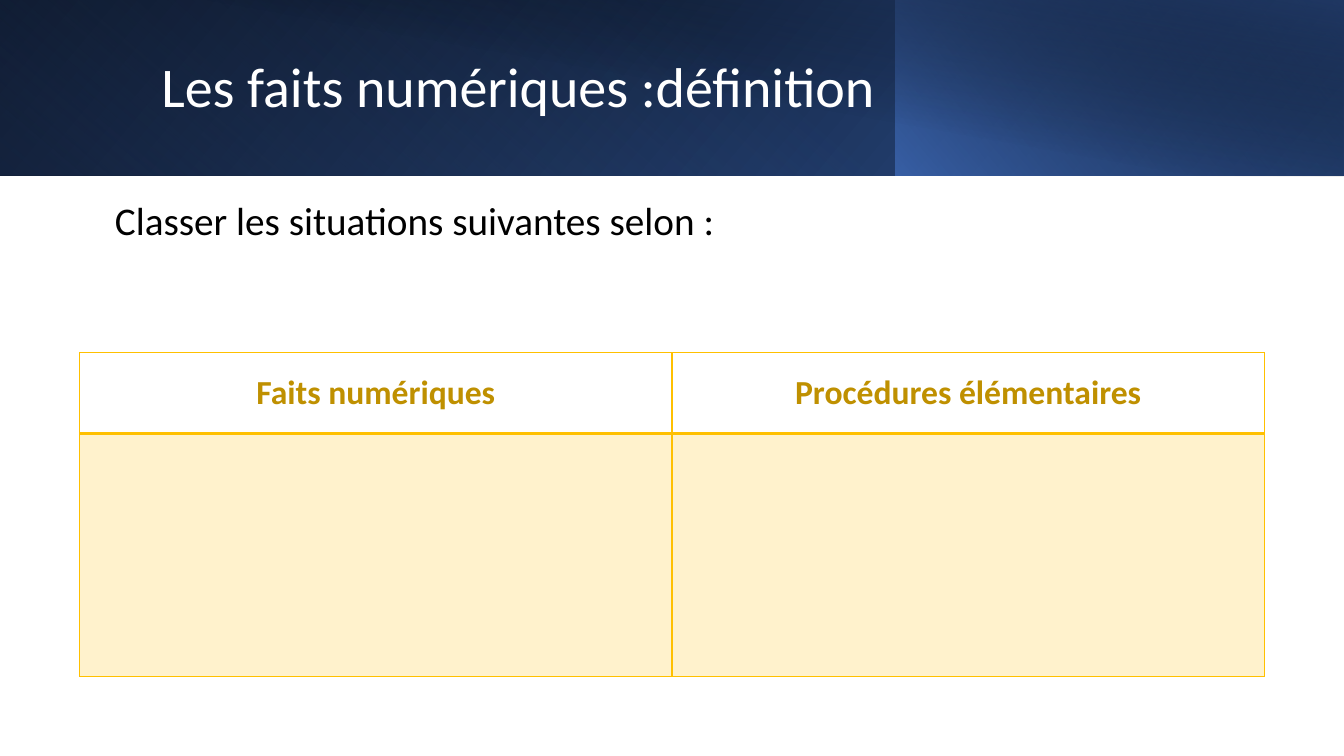
from lxml.etree import SubElement
from pptx import Presentation
from pptx.dml.color import RGBColor
from pptx.enum.shapes import MSO_SHAPE
from pptx.enum.text import MSO_ANCHOR, MSO_AUTO_SIZE, PP_ALIGN
from pptx.oxml import parse_xml
from pptx.oxml.ns import nsdecls, qn
from pptx.util import Inches, Pt

WIDTH, HEIGHT = 13.33, 7.5
BAND_HEIGHT = 1.74
SPLIT = WIDTH * 2 / 3
GOLD = "FFC000"


def color(hex_string):
    return RGBColor.from_string(hex_string)


def gradient_xml(stops, angle):
    stop_xml = "".join(
        f'<a:gs pos="{position * 1000}"><a:srgbClr val="{tone}">'
        f'<a:alpha val="{opacity * 1000}"/></a:srgbClr></a:gs>'
        for position, tone, opacity in stops
    )
    return parse_xml(
        f'<a:gradFill {nsdecls("a")} rotWithShape="1"><a:gsLst>{stop_xml}</a:gsLst>'
        f'<a:lin ang="{angle * 60000}" scaled="0"/></a:gradFill>'
    )


presentation = Presentation()
presentation.slide_width = Inches(WIDTH)
presentation.slide_height = Inches(HEIGHT)
slide = presentation.slides.add_slide(presentation.slide_layouts[1])
shapes = slide.shapes
title, body = slide.placeholders

bands = [
    (0, WIDTH, BAND_HEIGHT, 0, True, 140, [(0, "000000", 100), (100, "2F5597", 100)]),
    (0, SPLIT, BAND_HEIGHT, 180, True, 230, [(20, "4472C4", 0), (100, "203864", 55)]),
    (SPLIT, WIDTH - SPLIT, BAND_HEIGHT, 0, True, 220, [(0, "4472C4", 66), (100, "000000", 30)]),
    (0.5, WIDTH - 0.5, 1.75, 0, False, 280, [(50, "000000", 0), (99, "203864", 52)]),
]
for left, width, height, rotation, flipped, angle, stops in bands:
    band = shapes.add_shape(MSO_SHAPE.RECTANGLE, Inches(left), 0, Inches(width), Inches(height))
    band.shadow.inherit = False
    band.line.fill.background()
    band.rotation = rotation
    properties = band._element.spPr
    if flipped:
        properties.find(qn("a:xfrm")).set("flipH", "1")
    properties.find(qn("a:prstGeom")).addnext(gradient_xml(stops, angle))

frame = shapes.add_table(2, 2, Inches(0.79), Inches(3.5), Inches(11.75), Inches(3.21))
table = frame.table
table.first_row = False
table.horz_banding = False
table.rows[0].height = Inches(0.8)
table.rows[1].height = Inches(2.41)

for column, heading in enumerate(["Faits numériques", "Procédures élémentaires"]):
    header, answer = table.cell(0, column), table.cell(1, column)
    header.text = heading
    header.vertical_anchor = MSO_ANCHOR.MIDDLE
    header.fill.background()
    paragraph = header.text_frame.paragraphs[0]
    paragraph.alignment = PP_ALIGN.CENTER
    paragraph.font.name = "Calibri"
    paragraph.font.size = Pt(24)
    paragraph.font.bold = True
    paragraph.font.color.rgb = color("BF9000")

    answer.fill.solid()
    answer.fill.fore_color.rgb = color(GOLD)
    tint = answer._tc.tcPr.find(f".//{qn('a:srgbClr')}")
    SubElement(tint, qn("a:alpha"), val="20000")

    for cell, bottom_width in [(header, 2), (answer, 1)]:
        borders = [("lnL", 1), ("lnR", 1), ("lnT", 1), ("lnB", bottom_width)]
        for index, (side, points) in enumerate(borders):
            border = parse_xml(
                f'<a:{side} {nsdecls("a")} w="{Pt(points)}"><a:solidFill>'
                f'<a:srgbClr val="{GOLD}"/></a:solidFill></a:{side}>'
            )
            cell._tc.tcPr.insert(index, border)

texts = [
    (title, "Les faits numériques :définition", (1.5, 0.32, 10.82, 1.13), 40, "FFFFFF", MSO_ANCHOR.MIDDLE),
    (body, "Classer les situations suivantes selon :", (1.04, 1.95, 11.5, 4.76), 28, "000000", MSO_ANCHOR.TOP),
]
for placeholder, wording, box, size, tone, anchor in texts:
    placeholder.left, placeholder.top, placeholder.width, placeholder.height = map(Inches, box)
    text_frame = placeholder.text_frame
    text_frame.text = wording
    text_frame.word_wrap = True
    text_frame.auto_size = MSO_AUTO_SIZE.NONE
    text_frame.vertical_anchor = anchor
    paragraph = text_frame.paragraphs[0]
    paragraph.alignment = PP_ALIGN.LEFT
    paragraph.line_spacing = 0.9
    paragraph.space_before = Pt(0)
    paragraph_properties = paragraph._p.get_or_add_pPr()
    paragraph_properties.set("marL", "0")
    paragraph_properties.set("indent", "0")
    SubElement(paragraph_properties, qn("a:buNone"))
    paragraph.font.name = "Calibri"
    paragraph.font.size = Pt(size)
    paragraph.font.color.rgb = color(tone)

for front_shape in (title, frame, body):
    shapes._spTree.append(front_shape._element)

presentation.save("out.pptx")
